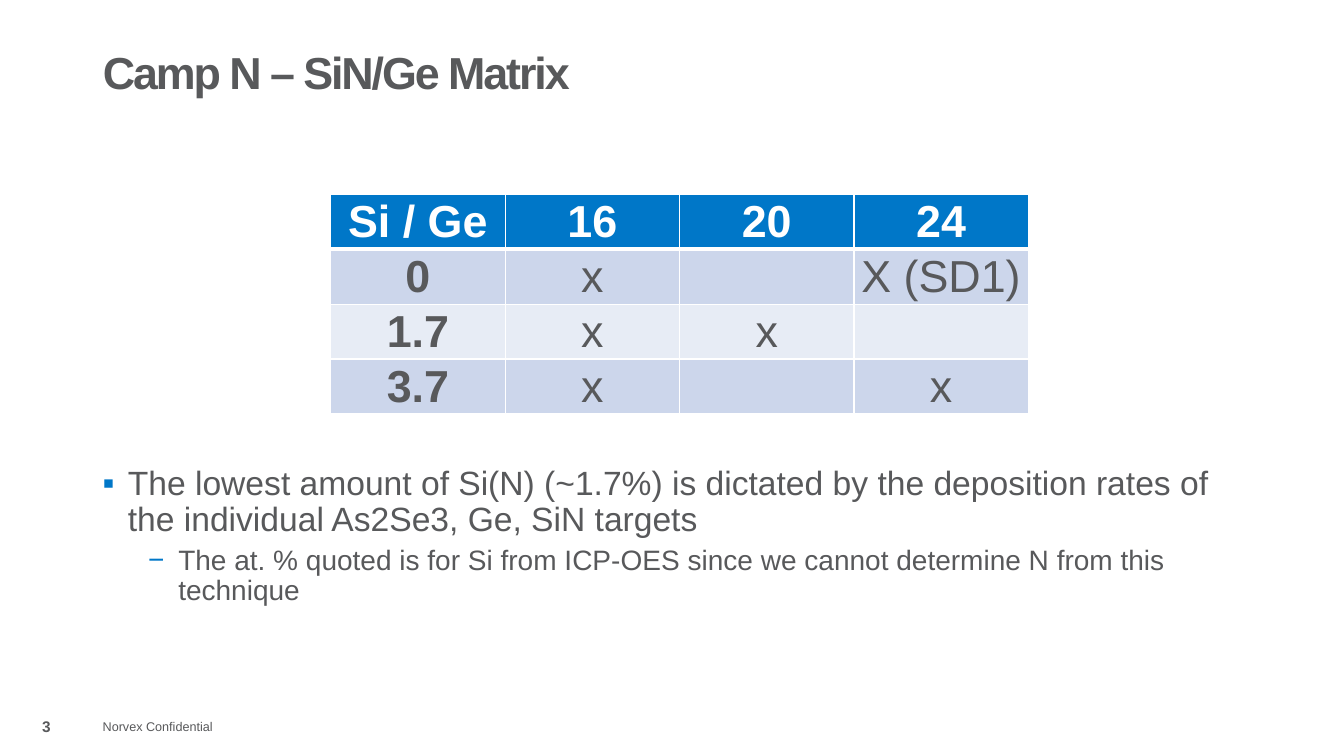
from lxml import etree
from pptx import Presentation
from pptx import util as u
from pptx.dml.color import RGBColor
from pptx.enum import text as t
from pptx.oxml import ns

GREY, BLUE, WHITE = "58595B", "0077C8", "FFFFFF"
BANDS = ["CCD6EB", "E7ECF5"]
MATRIX = [
    ["Si / Ge", "16", "20", "24"],
    ["0", "x", "", "X (SD1)"],
    ["1.7", "x", "x", ""],
    ["3.7", "x", "", "x"],
]
BULLETS = [
    dict(text="The lowest amount of Si(N) (~1.7%) is dictated by the deposition rates of "
              "the individual As2Se3, Ge, SiN targets",
         size=24, mark="▪", indent=0.25, hanging=0.25),
    dict(text="The at. % quoted is for Si from ICP-OES since we cannot determine N from this "
              "technique",
         size=20, level=1, before=5, mark="−", indent=0.75, hanging=0.3),
]


def color(hex_code):
    return RGBColor.from_string(hex_code)


def add_solid_fill(parent, tag, hex_code):
    """Append the colour element, wrapped in tag when one is given."""
    holder = etree.SubElement(parent, ns.qn(tag))
    etree.SubElement(holder, ns.qn("a:srgbClr"), val=hex_code)


def add_bullet(paragraph, mark, indent, hanging):
    properties = paragraph._p.get_or_add_pPr()
    properties.set("marL", str(u.Inches(indent)))
    properties.set("indent", str(-u.Inches(hanging)))
    add_solid_fill(properties, "a:buClr", BLUE)
    etree.SubElement(properties, ns.qn("a:buFont"), typeface="Arial")
    etree.SubElement(properties, ns.qn("a:buChar"), char=mark)


def add_border(cell, side, width):
    line = etree.SubElement(cell._tc.get_or_add_tcPr(), ns.qn("a:ln" + side), w=str(u.Pt(width)))
    add_solid_fill(line, "a:solidFill", WHITE)


def write(paragraph, text, size, hex_code=GREY, bold=False, align=t.PP_ALIGN.LEFT,
          line=None, before=0, level=0, tracking=None, mark=None, indent=0, hanging=0):
    paragraph.level = level
    paragraph.alignment = align
    paragraph.line_spacing = line
    paragraph.space_before = u.Pt(before)
    if mark:
        add_bullet(paragraph, mark, indent, hanging)
    run = paragraph.add_run()
    run.text = text
    run.font.name = "Arial"
    run.font.size = u.Pt(size)
    run.font.bold = bold
    run.font.color.rgb = color(hex_code)
    if tracking:
        run._r.get_or_add_rPr().set("spc", str(int(tracking * 100)))


class SlideBuilder:
    def __init__(self, presentation):
        self.slide = presentation.slides.add_slide(presentation.slide_layouts[5])

    def title(self, text, left, top, width, height):
        shape = self.slide.shapes.title
        shape.left, shape.top = u.Inches(left), u.Inches(top)
        shape.width, shape.height = u.Inches(width), u.Inches(height)
        frame = shape.text_frame
        frame.vertical_anchor = t.MSO_ANCHOR.MIDDLE
        write(frame.paragraphs[0], text, 32, bold=True, line=0.9, tracking=-1.5)

    def text_box(self, left, top, width, height, paragraphs, anchor=t.MSO_ANCHOR.MIDDLE):
        box = self.slide.shapes.add_textbox(
            u.Inches(left), u.Inches(top), u.Inches(width), u.Inches(height))
        frame = box.text_frame
        frame.word_wrap = True
        frame.vertical_anchor = anchor
        for index, style in enumerate(paragraphs):
            paragraph = frame.add_paragraph() if index else frame.paragraphs[0]
            write(paragraph, **style)

    def table(self, rows, left, top, column_width, row_height):
        columns = len(rows[0])
        table = self.slide.shapes.add_table(
            len(rows), columns, u.Inches(left), u.Inches(top),
            u.Inches(column_width * columns), u.Inches(row_height * len(rows))).table
        for row_index, row in enumerate(rows):
            table.rows[row_index].height = u.Inches(row_height)
            for column_index, text in enumerate(row):
                self.table_cell(table.cell(row_index, column_index), text, row_index, column_index)

    def table_cell(self, cell, text, row, column):
        header = row == 0
        cell.margin_left = cell.margin_right = cell.margin_top = u.Inches(0.01)
        cell.margin_bottom = 0
        cell.vertical_anchor = t.MSO_ANCHOR.MIDDLE
        widths = {"L": 1, "R": 1, "T": 3 if row == 1 else 1, "B": 3 if header else 1}
        for side, width in widths.items():
            add_border(cell, side, width)
        cell.fill.solid()
        cell.fill.fore_color.rgb = color(BLUE if header else BANDS[(row - 1) % 2])
        if text:
            write(cell.text_frame.paragraphs[0], text, 32, WHITE if header else GREY,
                  bold=header or column == 0, align=t.PP_ALIGN.CENTER)


def main():
    presentation = Presentation()
    presentation.slide_width = u.Inches(13.33)
    presentation.slide_height = u.Inches(7.5)
    builder = SlideBuilder(presentation)
    builder.title("Camp N – SiN/Ge Matrix", 0.92, 0.4, 11.5, 0.69)
    builder.text_box(0.92, 7.01, 1.52, 0.4, [dict(text="Norvex Confidential", size=9)])
    builder.text_box(0, 7.01, 0.92, 0.4,
                     [dict(text="3", size=11, bold=True, align=t.PP_ALIGN.CENTER)])
    builder.table(MATRIX, 3.28, 1.93, 1.73, 0.51)
    builder.text_box(0.92, 4.58, 11.63, 2.18, [dict(item, line=0.9) for item in BULLETS],
                     anchor=t.MSO_ANCHOR.TOP)
    presentation.save("out.pptx")


if __name__ == "__main__":
    main()
